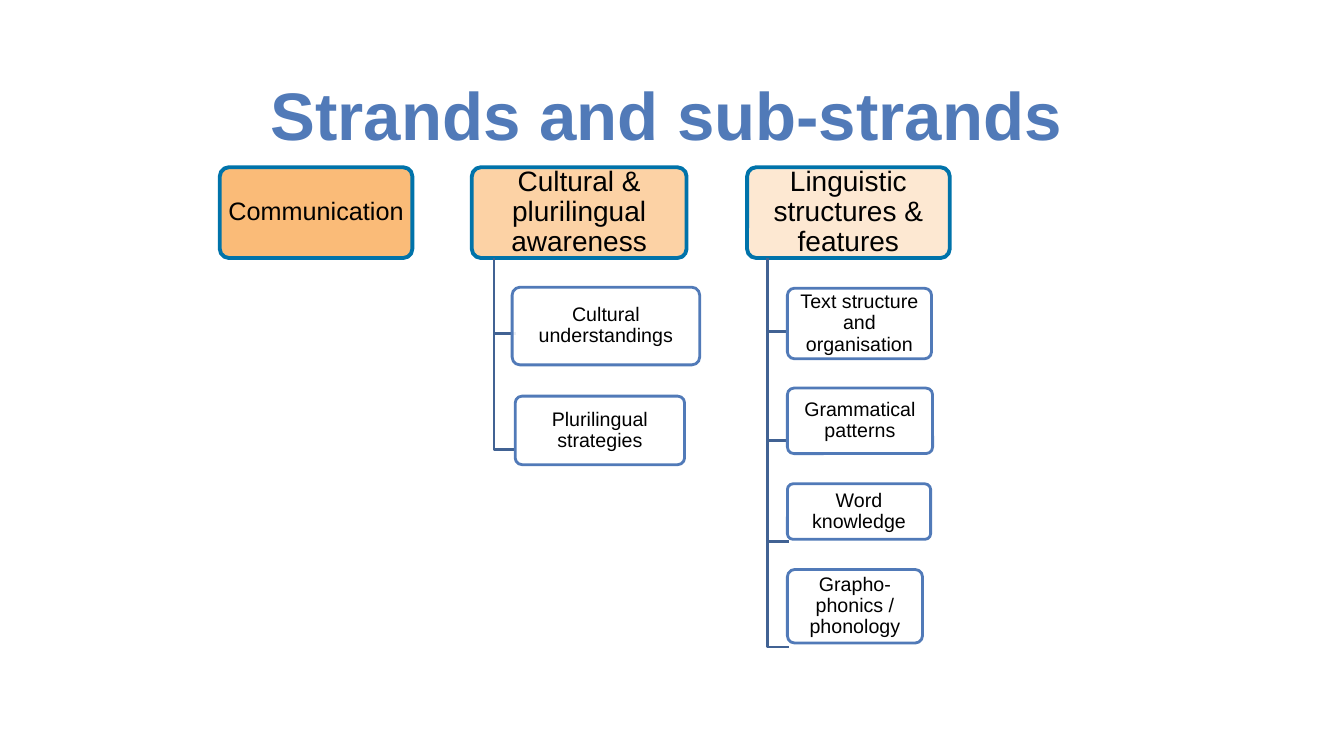
from lxml.etree import SubElement
from pptx import Presentation
from pptx.dml.color import RGBColor
from pptx.enum.shapes import MSO_SHAPE
from pptx.enum.text import MSO_ANCHOR, PP_ALIGN
from pptx.oxml.ns import qn
from pptx.util import Pt

PX = 9144  # 100 px to the inch
BLUE = RGBColor(0x51, 0x7A, 0xB8)
TEAL = RGBColor(0x00, 0x73, 0xAA)
NAVY = RGBColor(0x41, 0x62, 0x93)
BLACK = RGBColor(0, 0, 0)
WHITE = RGBColor(0xFF, 0xFF, 0xFF)
ORANGE = RGBColor(0xFA, 0xBB, 0x78)
PEACH = RGBColor(0xFC, 0xD2, 0xA5)
CREAM = RGBColor(0xFD, 0xE8, 0xD2)


def write(shape, text, size, color=BLACK, bold=False, spacing=0.9, inset=(4, 3)):
    frame = shape.text_frame
    frame.word_wrap = True
    frame.vertical_anchor = MSO_ANCHOR.MIDDLE
    frame.margin_left = frame.margin_right = inset[0] * PX
    frame.margin_top = frame.margin_bottom = inset[1] * PX
    para = frame.paragraphs[0]
    para.alignment = PP_ALIGN.CENTER
    para.line_spacing = spacing
    span = para.add_run()
    span.text = text
    span.font.name = "Arial"
    span.font.size = Pt(size)
    span.font.bold = bold
    span.font.color.rgb = color


def add_box(left, top, width, height, fill, line, weight):
    """Add a rounded box; a fill of None leaves it clear."""
    box = page.shapes.add_shape(MSO_SHAPE.ROUNDED_RECTANGLE,
                                left * PX, top * PX, width * PX, height * PX)
    box.shadow.inherit = False
    box.adjustments[0] = 0.1
    if fill is None:
        box.fill.background()
    else:
        box.fill.solid()
        box.fill.fore_color.rgb = fill
    box.line.color.rgb = line
    box.line.width = Pt(weight)
    return box


deck = Presentation()
deck.slide_width, deck.slide_height = 1333 * PX, 750 * PX
page = deck.slides.add_slide(deck.slide_layouts[6])

title = page.shapes.add_textbox(26 * PX, 60 * PX, 1270 * PX, 106 * PX)
write(title, "Strands and sub-strands", 48, color=BLUE, bold=True, spacing=1, inset=(10, 5))

STRAND_TOP, STRAND_HEIGHT = 166, 90
STRAND_BOTTOM = STRAND_TOP + STRAND_HEIGHT

# Strand: text, size, left, width, fill, sub-strand fill, (trunk x, branch end x), sub-strands
# Sub-strand: text, left, top, width, height, branch y
strands = [
    ("Communication", 18, 218, 191, ORANGE, None, None, []),
    ("Cultural & plurilingual awareness", 20, 468, 213, PEACH, WHITE, (490, 512), [
        ("Cultural understandings", 508, 285, 186, 77, 331),
        ("Plurilingual strategies", 511, 393, 168, 68, 446),
    ]),
    ("Linguistic structures & features", 20, 741, 201, CREAM, None, (761, 783), [
        ("Text structure and organisation", 781, 286, 143, 70, 329),
        ("Grammatical patterns", 781, 385, 144, 65, 437),
        ("Word knowledge", 781, 480, 142, 55, 537),
        ("Grapho-phonics / phonology", 781, 565, 134, 73, 642),
    ]),
]

for name, size, left, width, fill, sub_fill, branch, sub_strands in strands:
    strand = add_box(left, STRAND_TOP, width, STRAND_HEIGHT, fill, TEAL, 2.75)
    write(strand, name, size)

    for sub_name, sub_left, sub_top, sub_width, sub_height, branch_y in sub_strands:
        trunk_x, end_x = branch
        outline = page.shapes.build_freeform(trunk_x, STRAND_BOTTOM, scale=PX)
        outline.add_line_segments([(trunk_x, branch_y), (end_x, branch_y)], close=False)
        elbow = outline.convert_to_shape()
        elbow.shadow.inherit = False
        elbow.fill.background()
        elbow.line.color.rgb = NAVY
        elbow.line.width = Pt(2)

        sub_box = add_box(sub_left, sub_top, sub_width, sub_height, sub_fill, BLUE, 2)
        if sub_fill is not None:
            color = sub_box.fill._xPr.find(qn("a:solidFill"))[0]
            SubElement(color, qn("a:alpha"), val="90000")
        write(sub_box, sub_name, 14, inset=(3, 2))

deck.save("out.pptx")
